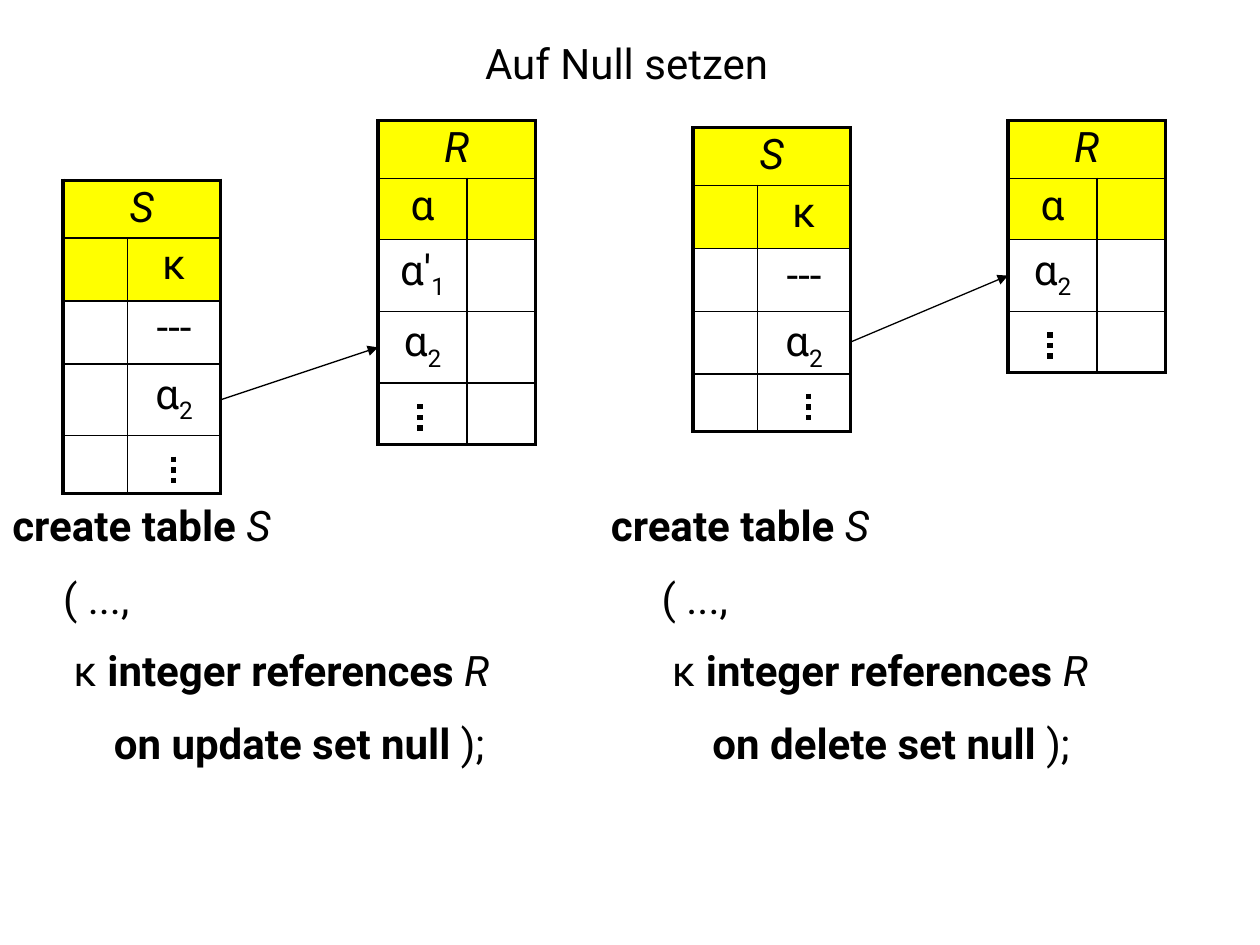
import dataclasses

import lxml.etree
import pptx
import pptx.dml.color
import pptx.enum.dml
import pptx.enum.shapes
import pptx.enum.text
import pptx.oxml.ns
import pptx.util

Pt = pptx.util.Pt
RGB = pptx.dml.color.RGBColor
Align = pptx.enum.text.PP_ALIGN
qn = pptx.oxml.ns.qn


@dataclasses.dataclass(frozen=True)
class Theme:
    font: str = "Roboto"
    size: float = 24
    ink: RGB = RGB(0, 0, 0)
    head: RGB = RGB(255, 255, 0)
    frame: float = 2.25
    grid: float = 1
    arrow: float = 0.75
    dots: float = 3
    tab: float = 29


THEME = Theme()
ALPHA = [("α", ""), ("2", "_")]
S_ROWS = ["κ", "---", ALPHA, ""]


def write(frame, lines, align=Align.LEFT, before=0, leading=1.0, indents=()):
    """Fill a frame; a line is a string or (text, style) runs: b, i, _ (subscript)."""
    for n, line in enumerate(lines):
        para = frame.paragraphs[0] if n == 0 else frame.add_paragraph()
        para.alignment = align
        para.space_before = Pt(before)
        para.line_spacing = leading
        if indents:
            props = para._p.get_or_add_pPr()
            props.set("marL", str(Pt(indents[n])))
            props.set("indent", "0")
        for words, style in [(line, "")] if isinstance(line, str) else line:
            run = para.add_run()
            run.text = words
            font = run.font
            font.name, font.size = THEME.font, Pt(THEME.size)
            font.bold, font.italic = "b" in style, "i" in style
            font.color.rgb = THEME.ink
            if "_" in style:
                run._r.get_or_add_rPr().set("baseline", "-25000")


def edge(cell, widths):
    """Draw the left, right, top and bottom borders."""
    props = cell._tc.get_or_add_tcPr()
    for n, (side, width) in enumerate(zip("LRTB", widths)):
        line = lxml.etree.Element(qn("a:ln" + side), w=str(Pt(width)))
        fill = lxml.etree.SubElement(line, qn("a:solidFill"))
        lxml.etree.SubElement(fill, qn("a:srgbClr"), val=str(THEME.ink))
        props.insert(n, line)


def link(slide, start, end, width, dash=None, arrow=False):
    line = slide.shapes.add_connector(
        pptx.enum.shapes.MSO_CONNECTOR.STRAIGHT, *map(Pt, start + end))
    line.line.color.rgb = THEME.ink
    line.line.width = Pt(width)
    if dash:
        line.line.dash_style = dash
    if arrow:
        lxml.etree.SubElement(line.line._get_or_add_ln(), qn("a:tailEnd"), type="triangle")
    lxml.etree.SubElement(line._element.spPr, qn("a:effectLst"))


def grid(slide, left, top, name, key, cols, rows, items, dot):
    """Place a relation; return the middle height of its α₂ row."""
    count = len(rows)
    table = slide.shapes.add_table(
        count, 2, Pt(left), Pt(top), Pt(sum(cols)), Pt(sum(rows))).table
    table.first_row = table.horz_banding = False
    for col, width in zip(table.columns, cols):
        col.width = Pt(width)
    for row, height in zip(table.rows, rows):
        row.height = Pt(height)
    for r in range(count):
        for c in range(2):
            cell = table.cell(r, c)
            cell.margin_left = cell.margin_right = 0
            if r < 2:
                cell.fill.solid()
                cell.fill.fore_color.rgb = THEME.head
            else:
                cell.fill.background()
            outer = (c == 0, c == 1 or r == 0, r == 0, r == count - 1)
            edge(cell, [THEME.frame if out else THEME.grid for out in outer])
    table.cell(0, 0).merge(table.cell(0, 1))
    cells = [(table.cell(0, 0), [(name, "i")])]
    cells += [(table.cell(r, key), item) for r, item in enumerate(items, 1) if item]
    for cell, item in cells:
        write(cell.text_frame, [item], align=Align.CENTER, before=4.8, leading=0.9)
    y = top + sum(rows[:-1]) + 12
    link(slide, (left + dot, y), (left + dot, y + 18), THEME.dots,
         dash=pptx.enum.dml.MSO_LINE.ROUND_DOT)
    at = 1 + items.index(ALPHA)
    return top + sum(rows[:at]) + rows[at] / 2


def code(slide, left, top, width, height, event):
    box = slide.shapes.add_textbox(*map(Pt, (left, top, width, height)))
    box.text_frame.word_wrap = True
    tab = THEME.tab
    lines = [
        [("create table ", "b"), ("S", "i")],
        "( ...,",
        [("κ ", ""), ("integer references ", "b"), ("R", "i")],
        [(f"on {event} set null", "b"), (" );", "")],
    ]
    write(box.text_frame, lines, before=12.6, indents=(0, tab, tab + 6, 2 * tab))


def pair(slide, left, top, s_rows, r_rows, r_items, dot):
    """Place relation S, relation R to its right, and the arrow between them."""
    right = left + 180
    start = grid(slide, left, top, "S", 1, (37, 53), s_rows, S_ROWS, dot)
    end = grid(slide, right, 69, "R", 0, (51, 39), r_rows, r_items, 24)
    link(slide, (left + 90, start), (right, end), THEME.arrow, arrow=True)


def title(slide, left, top, width, height, words):
    shape = slide.shapes.title
    shape.left, shape.top, shape.width, shape.height = map(Pt, (left, top, width, height))
    shape.text_frame.vertical_anchor = pptx.enum.text.MSO_ANCHOR.TOP
    write(shape.text_frame, [words])


def main():
    deck = pptx.Presentation()
    deck.slide_width, deck.slide_height = Pt(720), Pt(540)
    slide = deck.slides.add_slide(deck.slide_layouts[5])
    title(slide, 270, 18, 342, 36, "Auf Null setzen")
    pair(slide, 36, 103, (33, 36, 36, 41, 33), (33, 35, 41, 41, 35),
         ["α", [("α'", ""), ("1", "_")], ALPHA, ""], 63)
    pair(slide, 396, 73, (33, 36, 36, 35, 33), (33, 35, 41, 35),
         ["α", ALPHA, ""], 66)
    code(slide, 0, 282, 402, 166, "update")
    code(slide, 342, 282, 381, 166, "delete")
    deck.save("out.pptx")


if __name__ == "__main__":
    main()
